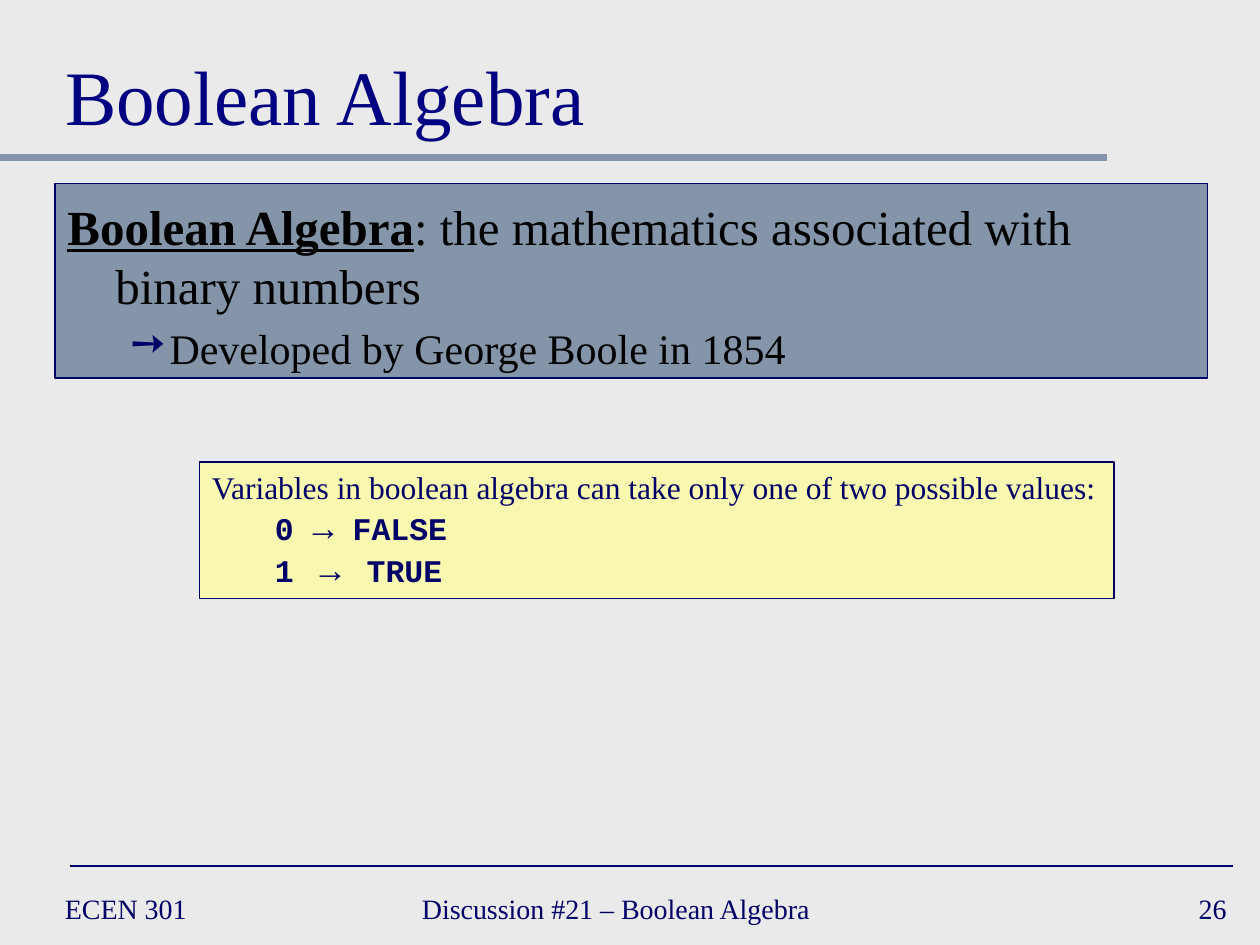
from dataclasses import dataclass

from lxml import etree
from pptx import Presentation
from pptx import util as u
from pptx.dml.color import RGBColor
from pptx.enum import shapes, text
from pptx.oxml.ns import qn

COLS, ROWS = 120, 90


@dataclass(frozen=True)
class Theme:
    paper: str = "EAEAEA"
    navy: str = "000066"
    title: str = "000080"
    slate: str = "8495A9"
    note: str = "FFFF99"
    black: str = "000000"
    serif: str = "Times New Roman"
    mono: str = "Courier New"
    title_size: int = 44
    lead_size: int = 28
    point_size: int = 24
    arrow_size: int = 20
    note_size: int = 18
    footer_size: int = 16


T = Theme()


def grid(col, row, width, height):
    """Slide-grid cells to lengths."""
    cell = u.Inches(10) / COLS
    return [u.Emu(round(n * cell)) for n in (col, row, width, height)]


def rgb(value):
    return RGBColor.from_string(value)


def add_run(p, words, size, color, **formats):
    r = p.add_run()
    r.text = words
    r.font.color.rgb = rgb(color)
    values = {"name": T.serif, "size": u.Pt(size), **formats}
    for name, value in values.items():
        setattr(r.font, name, value)


def set_frame(sp, **formats):
    tf = sp.text_frame
    values = {"word_wrap": True, "auto_size": text.MSO_AUTO_SIZE.NONE,
              "vertical_anchor": text.MSO_ANCHOR.TOP,
              "margin_left": u.Inches(0.1), "margin_right": u.Inches(0.1),
              "margin_top": u.Inches(0.05), "margin_bottom": u.Inches(0.05),
              **formats}
    for name, value in values.items():
        setattr(tf, name, value)
    return tf


def add_rule(slide, start, end, row, color, weight):
    x, y, width, _ = grid(start, row, end - start, 0)
    line = slide.shapes.add_connector(
        shapes.MSO_CONNECTOR.STRAIGHT, x, y, x + width, y)
    line.line.color.rgb = rgb(color)
    line.line.width = u.Pt(weight)
    etree.SubElement(line._element.spPr, qn("a:effectLst"))


def add_panel(slide, box, fill, weight, opacity=None):
    sp = slide.shapes.add_shape(shapes.MSO_SHAPE.RECTANGLE, *grid(*box))
    sp.shadow.inherit = False
    sp.fill.solid()
    sp.fill.fore_color.rgb = rgb(fill)
    sp.line.color.rgb = rgb(T.navy)
    sp.line.width = u.Pt(weight)
    if opacity:
        color = sp._element.spPr.find(qn("a:solidFill"))[0]
        etree.SubElement(color, qn("a:alpha"), val=str(opacity * 1000))
    return sp


def indent(p, left, first):
    pPr = p._p.get_or_add_pPr()
    pPr.set("marL", str(u.Inches(left)))
    pPr.set("indent", str(u.Inches(first)))
    return pPr


def add_bullet(pPr, char, color):
    holder = etree.SubElement(pPr, qn("a:buClr"))
    etree.SubElement(holder, qn("a:srgbClr"), val=color)
    etree.SubElement(pPr, qn("a:buChar"), char=char)


def add_title(slide, box):
    title = slide.shapes.title
    title.left, title.top, title.width, title.height = grid(*box)
    tf = set_frame(title, vertical_anchor=text.MSO_ANCHOR.BOTTOM)
    p = tf.paragraphs[0]
    p.alignment = text.PP_ALIGN.LEFT
    add_run(p, "Boolean Algebra", T.title_size, T.title)


def add_definition(slide, box):
    sp = add_panel(slide, box, T.slate, 0.75)
    tf = set_frame(sp, margin_top=u.Inches(0.1))

    p = tf.paragraphs[0]
    p.alignment = text.PP_ALIGN.LEFT
    indent(p, 0.38, -0.38)
    add_run(p, "Boolean Algebra", T.lead_size, T.black, bold=True, underline=True)
    add_run(p, ": the mathematics associated with binary numbers",
            T.lead_size, T.black)

    p = tf.add_paragraph()
    p.alignment = text.PP_ALIGN.LEFT
    p.level = 1
    p.space_before = u.Pt(0.2 * T.point_size)
    add_bullet(indent(p, 0.81, -0.31), "➙", T.navy)
    add_run(p, "Developed by George Boole in 1854", T.point_size, T.black)


def add_values_note(slide, box):
    sp = add_panel(slide, box, T.note, 1, opacity=70)
    tf = set_frame(sp, word_wrap=False)
    p = tf.paragraphs[0]
    p.alignment = text.PP_ALIGN.LEFT
    add_run(p, "Variables in boolean algebra can take only one of two possible values:",
            T.note_size, T.navy)
    for digit, meaning, arrow_font in (("0", "FALSE", T.mono), ("1", "TRUE", T.serif)):
        p = tf.add_paragraph()
        p.alignment = text.PP_ALIGN.LEFT
        add_run(p, "\t", T.note_size, T.navy)
        for words, size, font in ((f"{digit} ", T.note_size, T.mono),
                                  ("→", T.arrow_size, arrow_font),
                                  (f" {meaning}", T.note_size, T.mono)):
            add_run(p, words, size, T.navy, name=font, bold=True)


def add_footer(slide, row, height):
    left, right = text.PP_ALIGN.LEFT, text.PP_ALIGN.RIGHT
    for words, col, width, align in (("ECEN 301", 5, 26, left),
                                     ("Discussion #21 – Boolean Algebra", 39, 46, left),
                                     ("26", 93, 25, right)):
        sp = slide.shapes.add_textbox(*grid(col, row, width, height))
        tf = set_frame(sp, vertical_anchor=text.MSO_ANCHOR.MIDDLE)
        p = tf.paragraphs[0]
        p.alignment = align
        add_run(p, words, T.footer_size, T.navy)


def main():
    prs = Presentation()
    prs.slide_width, prs.slide_height = u.Inches(10), u.Inches(7.5)
    slide = prs.slides.add_slide(prs.slide_layouts[5])
    slide.background.fill.solid()
    slide.background.fill.fore_color.rgb = rgb(T.paper)

    add_rule(slide, 0, 105.4, 15, T.slate, 4)
    add_rule(slide, 6.7, 117.4, 82.5, T.navy, 1)
    add_footer(slide, 84, 5)
    add_title(slide, (5, 2, 110, 12))
    add_definition(slide, (5.25, 17.5, 109.75, 18.5))
    add_values_note(slide, (19, 44, 87.1, 13))
    prs.save("out.pptx")


if __name__ == "__main__":
    main()
